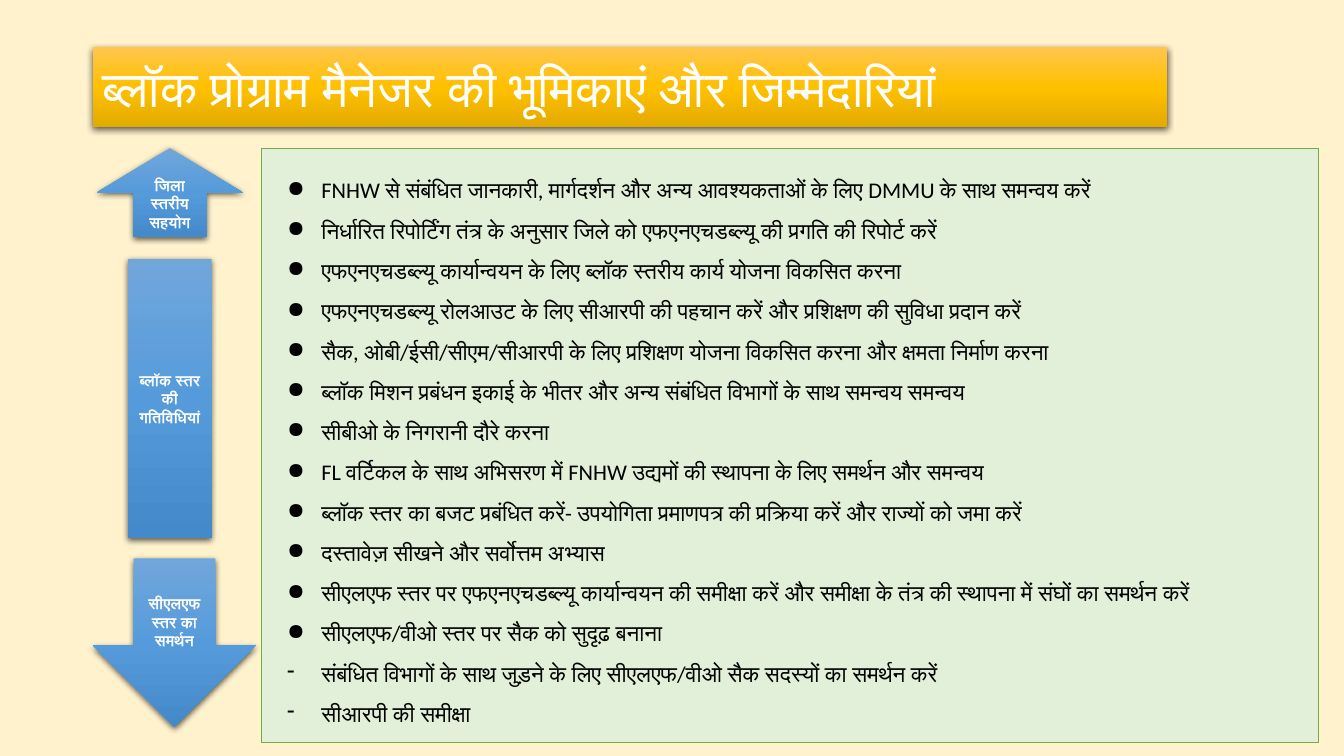
"""Build the slide on the roles and responsibilities of a block programme manager."""
from copy import deepcopy
from dataclasses import dataclass

from lxml import etree
from pptx import Presentation
from pptx.dml.color import RGBColor
from pptx.enum.shapes import MSO_SHAPE
from pptx.enum.text import MSO_ANCHOR, PP_ALIGN
from pptx.oxml.ns import qn
from pptx.util import Emu, Pt

RECTANGLE = MSO_SHAPE.RECTANGLE
UP_ARROW = MSO_SHAPE.UP_ARROW
DOWN_ARROW = MSO_SHAPE.DOWN_ARROW
MIDDLE = MSO_ANCHOR.MIDDLE
LEFT = PP_ALIGN.LEFT
CENTER = PP_ALIGN.CENTER
EMU_PER_PX = 9144
DOT, DASH = "●", "-"

TITLE = "ब्लॉक प्रोग्राम मैनेजर की भूमिकाएं और जिम्मेदारियां"
DUTIES = [
    (DOT, "FNHW से संबंधित जानकारी, मार्गदर्शन और अन्य आवश्यकताओं के लिए DMMU के साथ समन्वय करें"),
    (DOT, "निर्धारित रिपोर्टिंग तंत्र के अनुसार जिले को एफएनएचडब्ल्यू की प्रगति की रिपोर्ट करें"),
    (DOT, "एफएनएचडब्ल्यू कार्यान्वयन के लिए ब्लॉक स्तरीय कार्य योजना विकसित करना"),
    (DOT, "एफएनएचडब्ल्यू रोलआउट के लिए सीआरपी की पहचान करें और प्रशिक्षण की सुविधा प्रदान करें"),
    (DOT, "सैक, ओबी/ईसी/सीएम/सीआरपी के लिए प्रशिक्षण योजना विकसित करना और क्षमता निर्माण करना"),
    (DOT, "ब्लॉक मिशन प्रबंधन इकाई के भीतर और अन्य संबंधित विभागों के साथ समन्वय समन्वय"),
    (DOT, "सीबीओ के निगरानी दौरे करना"),
    (DOT, "FL वर्टिकल के साथ अभिसरण में FNHW उद्यमों की स्थापना के लिए समर्थन और समन्वय"),
    (DOT, "ब्लॉक स्तर का बजट प्रबंधित करें- उपयोगिता प्रमाणपत्र की प्रक्रिया करें और राज्यों को जमा करें"),
    (DOT, "दस्तावेज़ सीखने और सर्वोत्तम अभ्यास"),
    (DOT, "सीएलएफ स्तर पर एफएनएचडब्ल्यू कार्यान्वयन की समीक्षा करें और समीक्षा के तंत्र की "
          "स्थापना में संघों का समर्थन करें"),
    (DOT, "सीएलएफ/वीओ स्तर पर सैक को सुदृढ़ बनाना"),
    (DASH, "संबंधित विभागों के साथ जुड़ने के लिए सीएलएफ/वीओ सैक सदस्यों का समर्थन करें"),
    (DASH, "सीआरपी की समीक्षा"),
]


@dataclass(frozen=True)
class Theme:
    """Colours, font and type sizes of the slide."""
    page: str = "FFF2CC"
    panel: str = "E2F0D9"
    panel_line: str = "70AD47"
    gold: tuple = ("FFC64B", "FFC000", "E3AB00")
    blue: tuple = ("71A6DB", "559BDB", "448ACA")
    dark: str = "000000"
    light: str = "FFFFFF"
    font: str = "Calibri"
    title_size: int = 36
    body_size: int = 16
    label_size: int = 11


THEME = Theme()


@dataclass(frozen=True)
class Box:
    """A rectangle in px."""
    left: int
    top: int
    width: int
    height: int


def px(length):
    """Turn px into EMU."""
    return Emu(length * EMU_PER_PX)


def add_block(page, kind, box):
    """Add a plain shape with wrapped, vertically centred text."""
    shape = page.shapes.add_shape(
        kind, px(box.left), px(box.top), px(box.width), px(box.height))
    shape.shadow.inherit = False
    shape.text_frame.word_wrap = True
    shape.text_frame.vertical_anchor = MIDDLE
    return shape


def write(para, text, size, color, align=LEFT, bold=False):
    """Put text in a paragraph and set its look."""
    para.text = text
    para.alignment = align
    para.font.name = THEME.font
    para.font.size = Pt(size)
    para.font.bold = bold
    para.font.color.rgb = RGBColor.from_string(color)


def add_glossy_block(page, kind, box, colors):
    """Add a borderless shape with a downward gradient and a soft shadow."""
    shape = add_block(page, kind, box)
    shape.line.fill.background()
    shape.fill.gradient()
    shape.fill.gradient_angle = 270
    stop_list = shape._element.spPr.find(qn("a:gradFill")).find(qn("a:gsLst"))
    stop_list.insert(1, deepcopy(stop_list[0]))
    for stop, color, position in zip(shape.fill.gradient_stops, colors, (0, 0.5, 1)):
        stop.color.rgb = RGBColor.from_string(color)
        stop.position = position
    effects = shape._element.spPr.find(qn("a:effectLst"))
    shadow = etree.SubElement(effects, qn("a:outerShdw"), blurRad=str(Pt(4.5)),
                              dist=str(Pt(1.5)), dir="5400000", algn="ctr", rotWithShape="0")
    tint = etree.SubElement(shadow, qn("a:srgbClr"), val=THEME.dark)
    etree.SubElement(tint, qn("a:alpha"), val="63000")
    return shape


def add_title(page, box):
    """Add the gold title bar."""
    bar = add_glossy_block(page, RECTANGLE, box, THEME.gold)
    write(bar.text_frame.paragraphs[0], TITLE, THEME.title_size, THEME.light)


def add_levels(page, box):
    """Stack the district, block and cluster shapes in a column."""
    levels = [
        (UP_ARROW, Box(box.left + 4, box.top, 145, 88), "जिला स्तरीय सहयोग"),
        (RECTANGLE, Box(box.left + 35, box.top + 110, 83, 277), "ब्लॉक स्तर की गतिविधियां"),
        (DOWN_ARROW, Box(box.left, box.top + box.height - 167, box.width, 167),
         "सीएलएफ स्तर का समर्थन"),
    ]
    for kind, place, label in levels:
        shape = add_glossy_block(page, kind, place, THEME.blue)
        write(shape.text_frame.paragraphs[0], label, THEME.label_size,
              THEME.light, CENTER, bold=True)


def add_duties(page, box):
    """Add the green panel with the bulleted duties."""
    panel = add_block(page, RECTANGLE, box)
    panel.fill.solid()
    panel.fill.fore_color.rgb = RGBColor.from_string(THEME.panel)
    panel.line.color.rgb = RGBColor.from_string(THEME.panel_line)
    panel.line.width = Pt(0.5)
    frame = panel.text_frame
    for index, (bullet, duty) in enumerate(DUTIES):
        para = frame.add_paragraph() if index else frame.paragraphs[0]
        para.line_spacing = 1.5
        properties = para._p.get_or_add_pPr()
        properties.set("marL", str(px(50)))
        properties.set("indent", str(px(-34)))
        etree.SubElement(properties, qn("a:buChar"), char=bullet)
        write(para, duty, THEME.body_size, THEME.dark)


def main():
    """Build and save the deck."""
    deck = Presentation()
    deck.slide_width, deck.slide_height = px(1333), px(750)
    page = deck.slides.add_slide(deck.slide_layouts[6])
    page.background.fill.solid()
    page.background.fill.fore_color.rgb = RGBColor.from_string(THEME.page)
    add_duties(page, Box(259, 147, 1049, 589))
    add_levels(page, Box(92, 147, 162, 574))
    add_title(page, Box(92, 47, 1066, 79))
    deck.save("out.pptx")


if __name__ == "__main__":
    main()
